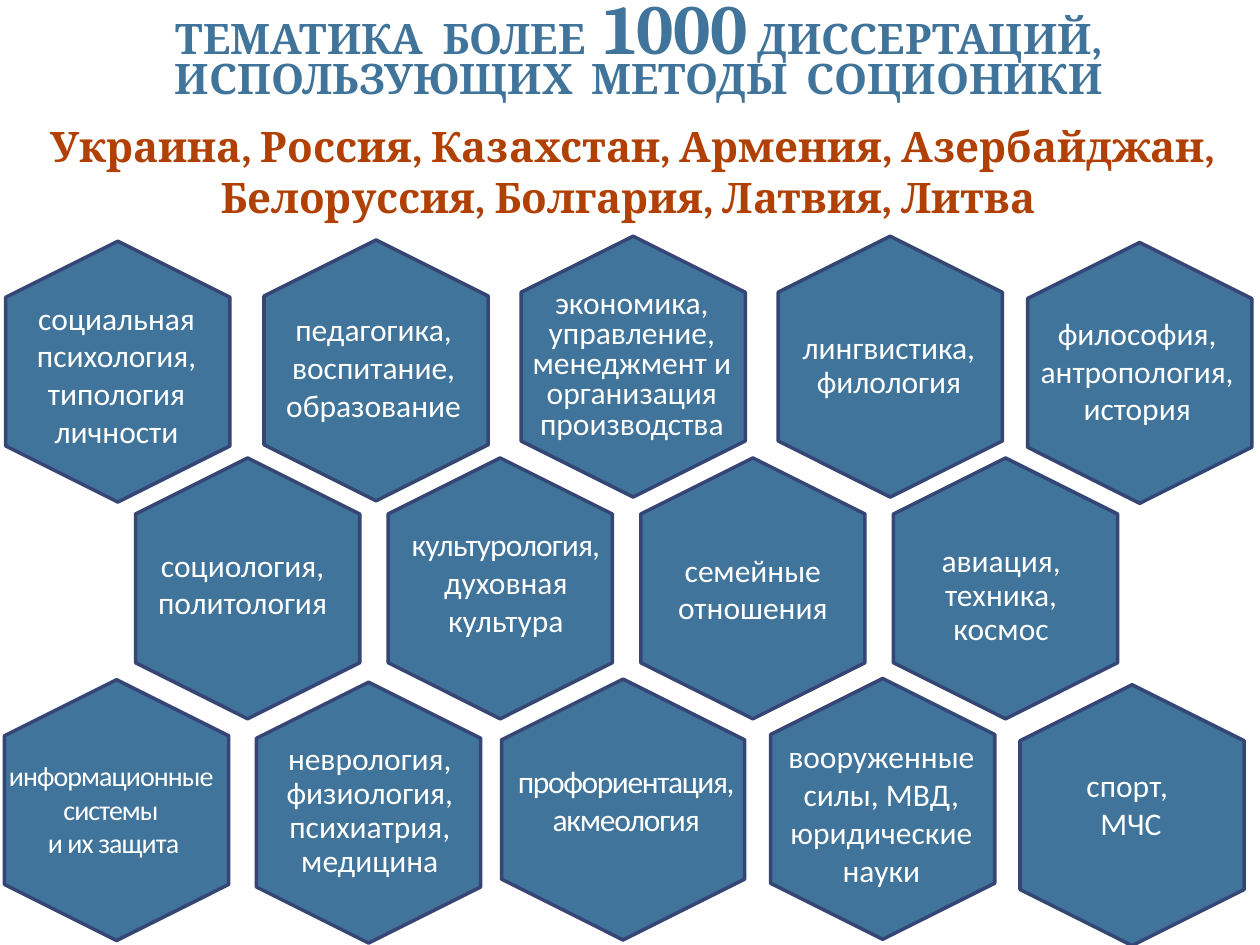
import pptx
import pptx.util
import pptx.dml.color
import pptx.enum.shapes
import pptx.enum.text

Inches, Pt = pptx.util.Inches, pptx.util.Pt
MIDDLE = pptx.enum.text.MSO_ANCHOR.MIDDLE
CENTER = pptx.enum.text.PP_ALIGN.CENTER
BLUE, NAVY, RUST, WHITE = "40749B", "354675", "B04004", "FFFFFF"


def rgb(value):
    return pptx.dml.color.RGBColor.from_string(value)


def add_run(p, text, size, font, color, bold=False, spacing=0):
    for i, line in enumerate(text.split("\n")):
        if i:
            p.add_line_break()
        if not line:
            continue
        r = p.add_run()
        r.text = line
        r.font.size = Pt(size)
        r.font.name = font
        r.font.bold = bold
        r.font.color.rgb = rgb(color)
        if spacing:
            r.font._element.set("spc", str(round(spacing * 100)))


prs = pptx.Presentation()
prs.slide_width, prs.slide_height = Inches(10), Inches(7.5)
s = prs.slides.add_slide(prs.slide_layouts[5])

top_row = [(-0.1, 2.06), (1.95, 2.05), (3.99, 2.02), (6.03, 2.02), (8.01, 2.07)]
middle_row = [(0.93 + 2.005 * i, 3.78) for i in range(4)]
bottom_row = [(-0.11, 5.54), (1.89, 5.56), (3.91, 5.46), (5.97, 5.53), (7.95, 5.58)]

for x, y in top_row + middle_row + bottom_row:
    height = 1.93 if (x, y) == (3.91, 5.46) else 1.78
    sp = s.shapes.add_shape(pptx.enum.shapes.MSO_SHAPE.HEXAGON,
                            Inches(x), Inches(y), Inches(2.07), Inches(height))
    sp.rotation = 90
    sp.shadow.inherit = False
    sp.fill.solid()
    sp.fill.fore_color.rgb = rgb(BLUE)
    sp.line.color.rgb = rgb(NAVY)
    sp.line.width = Pt(2)

title = s.shapes.title
title.left, title.top = Inches(0.46), Inches(0.07)
title.width, title.height = Inches(9.22), Inches(0.8)
tf = title.text_frame
tf.auto_size = pptx.enum.text.MSO_AUTO_SIZE.NONE
tf.vertical_anchor = pptx.enum.text.MSO_ANCHOR.BOTTOM
p = tf.paragraphs[0]
p.alignment = CENTER
p.line_spacing = Pt(20)
for text, size in [("ТЕМАТИКА  БОЛЕЕ  ", 24), ("1000", 40),
                   (" ДИССЕРТАЦИЙ, ИСПОЛЬЗУЮЩИХ  МЕТОДЫ  СОЦИОНИКИ", 24)]:
    add_run(p, text, size, "Cambria", BLUE, bold=True)

topics = [
    (0.02, 2.31, 1.81, 1, 18, [("социальная психология,\nтипология личности", 0)]),
    (2.06, 2.25, 1.81, 1, 18, [("педагогика,\nвоспитание,\nобразование", 0)]),
    (4.11, 2.24, 1.81, 0.8, 18,
     [("экономика,\nуправление, менеджмент и организация производства", 0)]),
    (6.15, 2.25, 1.81, 0.9, 18, [("лингвистика, филология", 0)]),
    (8.12, 2.28, 1.81, 1, 18, [("философия,\nантропология,\nистория", 0)]),
    (1.02, 3.97, 1.81, 1, 18, [("социология,\nполитология", 0)]),
    (3.08, 3.96, 1.87, 1, 18, [("культурология,\n", -0.5), ("духовная культура", 0)]),
    (5.07, 4.01, 1.81, 1, 18, [("семейные отношения", 0)]),
    (7.04, 4.07, 1.81, 0.9, 18, [("авиация,\nтехника,\nкосмос", 0)]),
    (-0.18, 5.76, 2.12, 1, 16, [("информационные системы\n и их защита", -0.5)]),
    (2.03, 5.78, 1.81, 0.9, 18, [("неврология,\nфизиология, психиатрия, медицина", 0)]),
    (3.91, 5.69, 2.12, 1, 18, [("профориентация,\n", -0.8), ("акмеология", -0.7)]),
    (6.09, 5.79, 1.81, 1, 18, [("вооруженные силы, МВД,\nюридические науки", 0)]),
    (8.07, 5.72, 1.81, 1, 18, [("спорт, \nМЧС", 0)]),
]

for x, y, width, line_spacing, size, runs in topics:
    tf = s.shapes.add_textbox(Inches(x), Inches(y), Inches(width), Inches(1.32)).text_frame
    tf.word_wrap = True
    tf.vertical_anchor = MIDDLE
    tf.margin_left = tf.margin_right = tf.margin_top = tf.margin_bottom = Inches(0.06)
    p = tf.paragraphs[0]
    p.alignment = CENTER
    p.line_spacing = line_spacing
    for text, spacing in runs:
        add_run(p, text, size, "Calibri", WHITE, spacing=spacing)

tf = s.shapes.add_textbox(Inches(0.26), Inches(0.91), Inches(9.52), Inches(0.91)).text_frame
tf.word_wrap = True
tf.auto_size = pptx.enum.text.MSO_AUTO_SIZE.SHAPE_TO_FIT_TEXT
p = tf.paragraphs[0]
p.alignment = CENTER
add_run(p, "Украина, Россия, Казахстан, Армения, Азербайджан, "
           "Белоруссия, Болгария, Латвия, Литва ", 24, "Cambria", RUST, bold=True)

prs.save("out.pptx")
